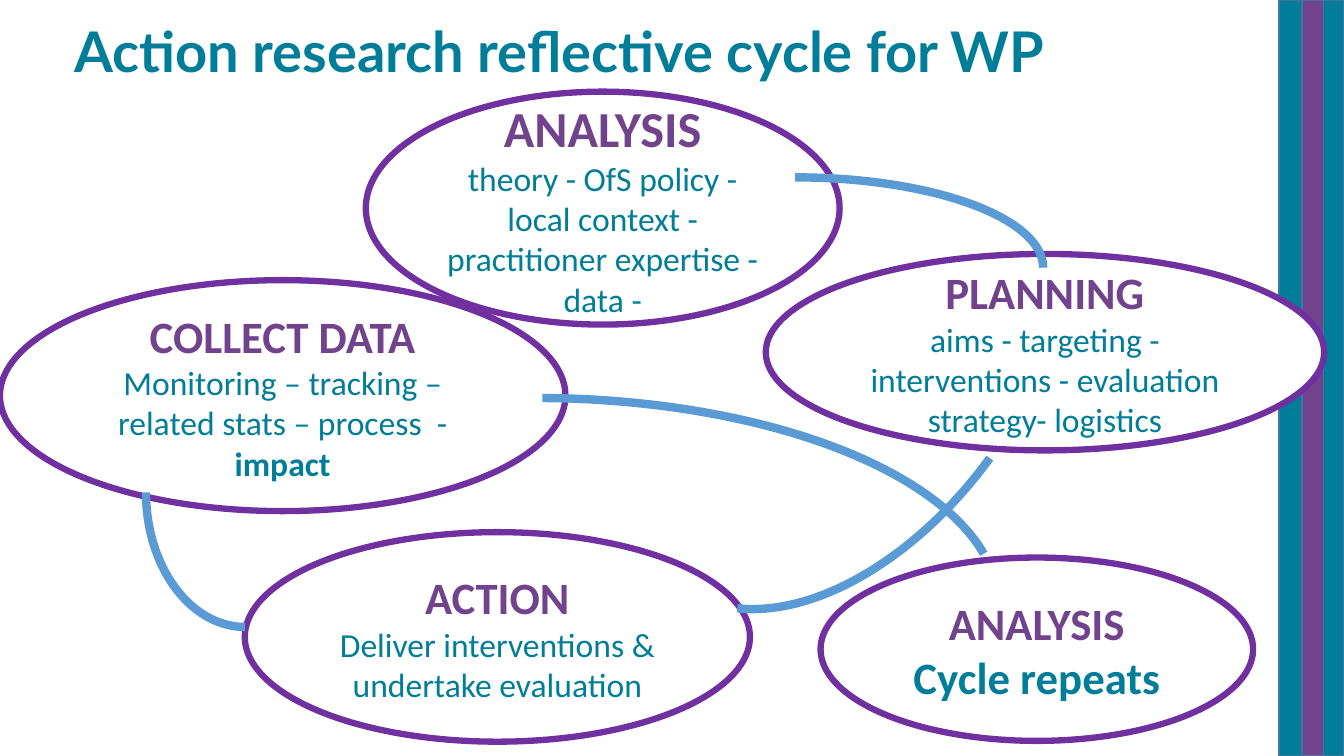
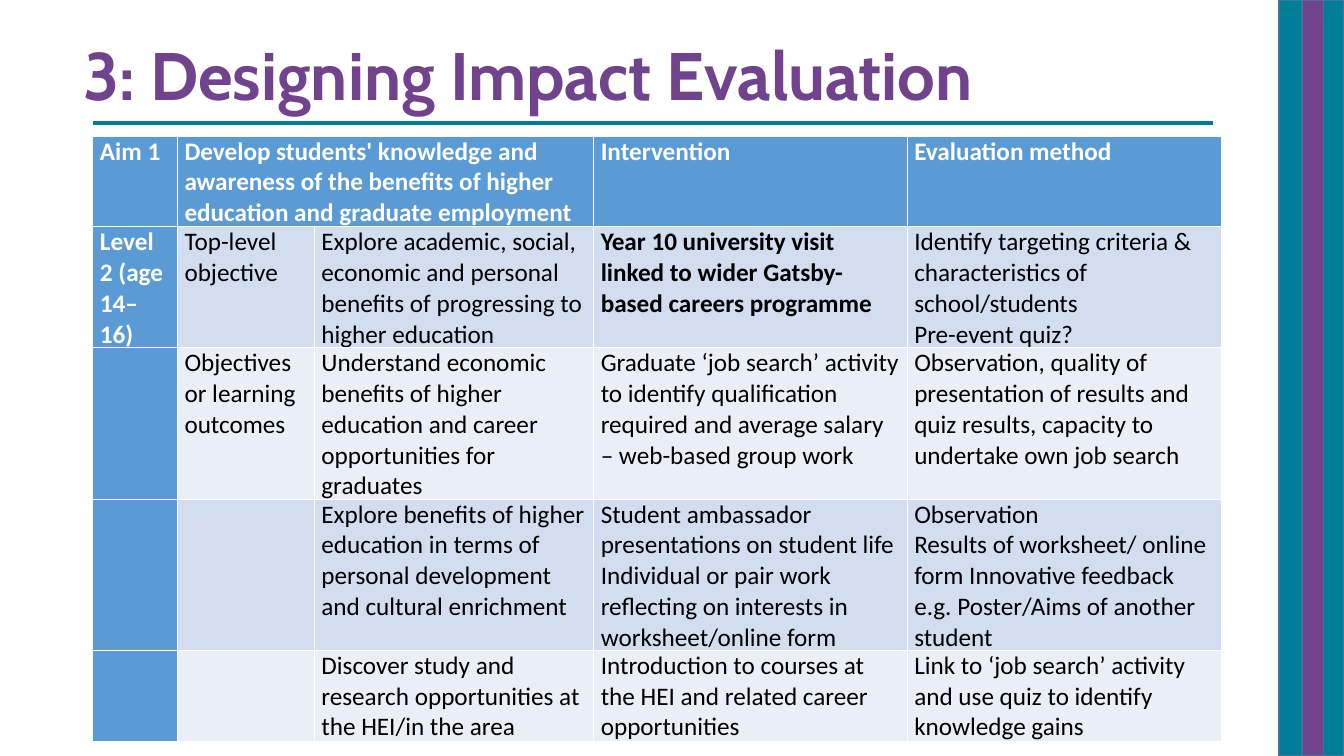
"""Build two slides on action research and impact evaluation."""
from lxml.etree import SubElement
from pptx import Presentation
from pptx.dml.color import RGBColor
from pptx.enum.shapes import MSO_CONNECTOR, MSO_SHAPE
from pptx.enum.text import MSO_ANCHOR, PP_ALIGN
from pptx.oxml.ns import qn
from pptx.util import Cm, Pt

TEAL, PLUM, VIOLET = "007D98", "71438D", "7030A0"
BLUE, NAVY, WHITE, BLACK = "5B9BD5", "43739E", "FFFFFF", "000000"
ROW_FILLS = ("D2DEEF", "EAEFF7")


def rgb(value):
    return RGBColor.from_string(value)


def lengths(values):
    return [Cm(value) for value in values]


class SlideMaker:
    def __init__(self):
        self.deck = Presentation()
        self.deck.slide_width, self.deck.slide_height = Cm(33.87), Cm(19.05)
        self.page = None

    def new_page(self):
        self.page = self.deck.slides.add_slide(self.deck.slide_layouts[6])
        for left, width, color in ((33.35, 0.52, TEAL), (32.77, 0.58, PLUM), (32.23, 0.58, TEAL)):
            self.shape(MSO_SHAPE.RECTANGLE, (left, 0, width, 19.05), color, NAVY, 1)

    def shape(self, kind, area, fill, line, weight):
        shape = self.page.shapes.add_shape(kind, *lengths(area))
        shape.shadow.inherit = False
        if fill:
            shape.fill.solid()
            shape.fill.fore_color.rgb = rgb(fill)
        else:
            shape.fill.background()
        shape.line.color.rgb = rgb(line)
        shape.line.width = Pt(weight)
        return shape

    def add_text(self, frame, texts, size, color, bold=False, font="Calibri", align=None):
        for text in texts:
            paragraph = frame.paragraphs[0]
            if paragraph.runs:
                paragraph = frame.add_paragraph()
            paragraph.add_run().text = text
            paragraph.alignment = align
            paragraph.font.name = font
            paragraph.font.size = Pt(size)
            paragraph.font.bold = bold
            paragraph.font.color.rgb = rgb(color)

    def title(self, area, text, size, color, font):
        box = self.page.shapes.add_textbox(*lengths(area))
        box.text_frame.word_wrap = True
        self.add_text(box.text_frame, [text], size, color, True, font)

    def oval(self, area, heading, lines, heading_size=32, body_size=24, bold=False, ending=""):
        frame = self.shape(MSO_SHAPE.OVAL, area, WHITE, VIOLET, 4.5).text_frame
        frame.word_wrap = True
        frame.vertical_anchor = MSO_ANCHOR.MIDDLE
        self.add_text(frame, [heading], heading_size, PLUM, True, align=PP_ALIGN.CENTER)
        self.add_text(frame, lines, body_size, TEAL, bold, align=PP_ALIGN.CENTER)
        if ending:
            span = frame.paragraphs[-1].add_run()
            span.text = ending
            span.font.bold = True

    def arc(self, area, start, end, rotation=0):
        arc = self.shape(MSO_SHAPE.ARC, area, None, BLUE, 6)
        arc.adjustments[0], arc.adjustments[1] = start, end
        arc.rotation = rotation

    def rule(self, left, right, top, color, weight):
        rule = self.page.shapes.add_connector(MSO_CONNECTOR.STRAIGHT, *lengths((left, top, right, top)))
        rule.line.color.rgb = rgb(color)
        rule.line.width = Pt(weight)
        SubElement(rule.element.spPr, qn("a:effectLst"))

    def table(self, left, top, widths, heights, rows, bold_cells):
        area = lengths((left, top, sum(widths), sum(heights)))
        table = self.page.shapes.add_table(len(rows), len(widths), *area).table
        table.first_col = True
        for column, width in zip(table.columns, widths):
            column.width = Cm(width)
        for row, height in zip(table.rows, heights):
            row.height = Cm(height)
        for i, row in enumerate(rows):
            for j, text in enumerate(row):
                cell = table.cell(i, j)
                heading = i == 0 or j == 0
                cell.margin_left = cell.margin_right = Cm(0.18)
                cell.margin_top = cell.margin_bottom = 0
                cell.fill.solid()
                cell.fill.fore_color.rgb = rgb(BLUE if heading else ROW_FILLS[(i - 1) % 2])
                color = WHITE if heading else BLACK
                self.add_text(cell.text_frame, text.split("\n"), 18, color, heading or (i, j) in bold_cells)
        return table


def cycle_page(maker):
    maker.new_page()
    maker.title((1.63, 0.28, 29.92, 1.96), "Action research reflective cycle for WP", 40, TEAL, "Lato")
    maker.oval((9.22, 2.31, 11.94, 5.87), "ANALYSIS",
               ["theory - OfS policy -", "local context - practitioner expertise - data -"], heading_size=36)
    maker.oval((19.3, 6.4, 14.07, 4.95), "PLANNING",
               ["aims - targeting - interventions - evaluation strategy- logistics"])
    maker.oval((20.68, 14.05, 10.9, 4.62), "ANALYSIS", ["Cycle repeats"], body_size=32, bold=True)
    maker.oval((6.17, 13.41, 12.73, 5.28), "ACTION", ["Deliver interventions & undertake evaluation"])
    maker.oval((0, 7.06, 14.25, 5.82), "COLLECT DATA",
               ["Monitoring – tracking – related stats – process  - "], ending="impact")
    maker.arc((13.79, 4.47, 12.5, 4.55), 162, 0)
    maker.arc((14.25, 4.67, 14.38, 8.66), 162, 208.99, rotation=126)
    maker.arc((1.83, 10.03, 23.34, 10.49), 163.12, 212)
    maker.arc((3.68, 9.02, 5, 6.78), 54, 108)


def evaluation_page(maker):
    rows = [
        ["Aim 1",
         "Develop students' knowledge and awareness of the benefits of higher education and graduate employment",
         "", "Intervention", "Evaluation method"],
        ["Level 2 (age 14–16)", "Top-level objective",
         "Explore academic, social, economic and personal benefits of progressing to higher education",
         "Year 10 university visit linked to wider Gatsby-based careers programme",
         "Identify targeting criteria & characteristics of school/students\nPre-event quiz?"],
        ["", "Objectives or learning outcomes",
         "Understand economic benefits of higher education and career opportunities for graduates",
         "Graduate ‘job search’ activity to identify qualification required and average salary "
         "– web-based group work",
         "Observation, quality of presentation of results and quiz results, "
         "capacity to undertake own job search"],
        ["", "",
         "Explore benefits of higher education in terms of personal development and cultural enrichment",
         "Student ambassador presentations on student life\n"
         "Individual or pair work reflecting on interests in worksheet/online form",
         "Observation\nResults of worksheet/ online form Innovative feedback "
         "e.g. Poster/Aims of another student"],
        ["", "",
         "Discover study and research opportunities at the HEI/in the area",
         "Introduction to courses at the HEI and related career opportunities",
         "Link to ‘job search’ activity and use quiz to identify knowledge gains"],
    ]
    maker.new_page()
    maker.rule(2.34, 30.58, 3.1, TEAL, 3)
    maker.title((1.85, 0.71, 29.21, 2.31), "3: Designing Impact Evaluation", 48, PLUM, "Cabin")
    table = maker.table(2.34, 3.43, (2.13, 3.45, 7.04, 7.9, 7.92),
                        (2.16, 2.87, 3.58, 3.58, 2.16), rows, {(1, 3)})
    table.cell(0, 1).merge(table.cell(0, 2))


def main():
    maker = SlideMaker()
    cycle_page(maker)
    evaluation_page(maker)
    maker.deck.save("out.pptx")


if __name__ == "__main__":
    main()
